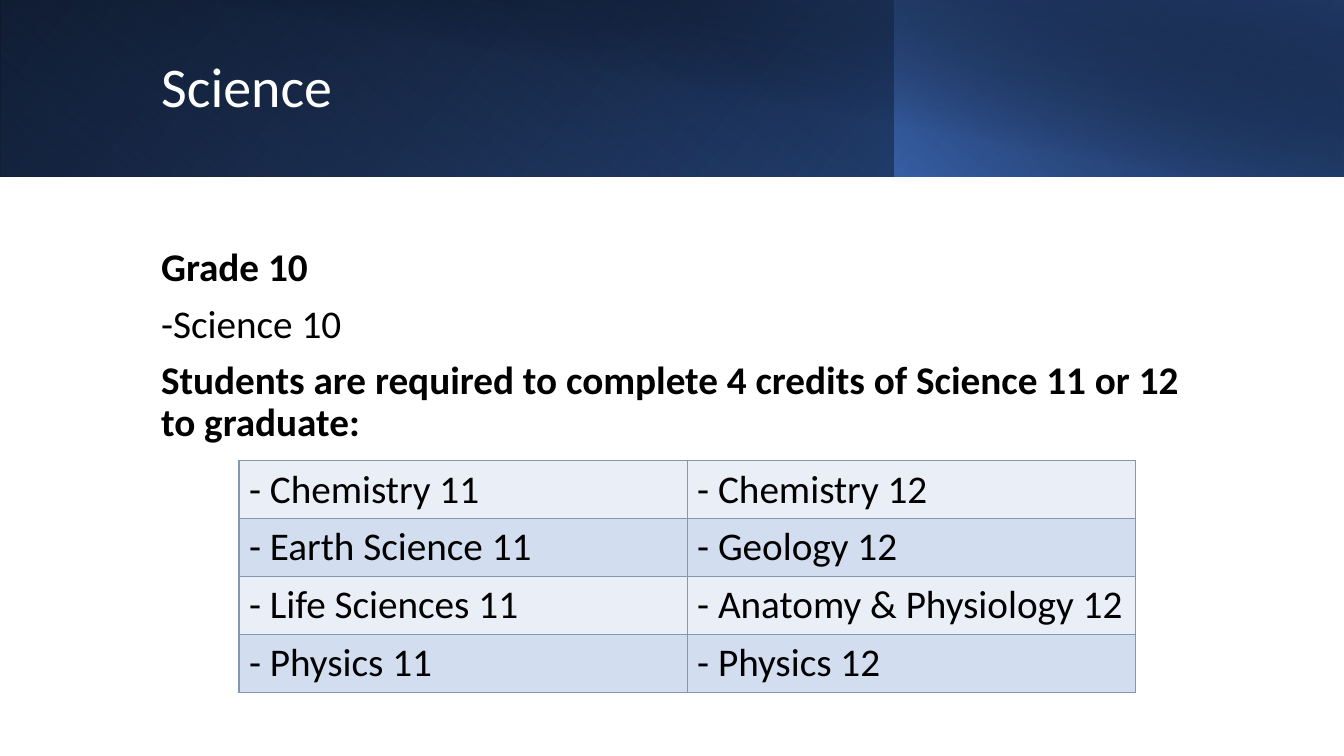
from lxml import etree
from pptx import Presentation
from pptx.dml.color import RGBColor
from pptx.enum.shapes import MSO_SHAPE
from pptx.enum.text import MSO_ANCHOR
from pptx.oxml import parse_xml
from pptx.oxml.ns import nsdecls, qn
from pptx.util import Inches, Pt

RECTANGLE = MSO_SHAPE.RECTANGLE
MIDDLE, TOP = MSO_ANCHOR.MIDDLE, MSO_ANCHOR.TOP
FONT = "Calibri"
COLORS = {
    "white": "FFFFFF", "black": "000000", "blue": "4472C4",
    "deep_blue": "2F5597", "navy": "203864",
    "light_row": "EAEFF7", "dark_row": "D2DEEF", "border": "8497B0",
}
# Each layer: left, width, rotation, flipped, angle, stops (position, color, opacity)
BANNER_LAYERS = [
    (0, 13.33, 0, True, 140, [(0, "black", 100), (100, "deep_blue", 100)]),
    (0, 8.88, 180, True, 230, [(20, "blue", 0), (100, "navy", 55)]),
    (8.87, 4.46, 0, True, 220, [(0, "blue", 66), (100, "black", 30)]),
    (0.5, 12.83, 0, False, 280, [(50, "black", 0), (99, "navy", 52)]),
]
REQUIREMENTS = [
    ("Grade 10", True),
    ("-Science 10", False),
    ("Students are required to complete 4 credits of Science 11 or 12 to graduate:", True),
]
COURSES = [
    ("- Chemistry 11", "- Chemistry 12"),
    ("- Earth Science 11", "- Geology 12"),
    ("- Life Sciences 11", "- Anatomy & Physiology 12"),
    ("- Physics 11", "- Physics 12"),
]


def rgb(name):
    return RGBColor.from_string(COLORS[name])


def add_run(paragraph, text, size, color, bold=False):
    run = paragraph.add_run()
    run.text = text
    run.font.name = FONT
    run.font.size = Pt(size)
    run.font.bold = bold
    run.font.color.rgb = rgb(color)


def add_text_frame(slide, box, anchor):
    frame = slide.shapes.add_textbox(*map(Inches, box)).text_frame
    frame.word_wrap = True
    frame.vertical_anchor = anchor
    return frame


def set_gradient(shape, angle, stops):
    stop_xml = "".join(
        f'<a:gs pos="{position * 1000}"><a:srgbClr val="{COLORS[color]}">'
        f'<a:alpha val="{opacity * 1000}"/></a:srgbClr></a:gs>'
        for position, color, opacity in stops)
    gradient = parse_xml(
        f'<a:gradFill {nsdecls("a")} rotWithShape="1"><a:gsLst>{stop_xml}</a:gsLst>'
        f'<a:lin ang="{angle * 60000}" scaled="0"/></a:gradFill>')
    shape._element.spPr.find(qn("a:prstGeom")).addnext(gradient)


def add_banner(slide, box):
    left, top, width, height = box
    # Layered gradients
    for offset, layer_width, rotation, flipped, angle, stops in BANNER_LAYERS:
        shape = slide.shapes.add_shape(
            RECTANGLE, Inches(left + offset), Inches(top), Inches(layer_width), Inches(height))
        shape.shadow.inherit = False
        shape.line.fill.background()
        shape.rotation = rotation
        if flipped:
            shape._element.spPr.find(qn("a:xfrm")).set("flipH", "1")
        set_gradient(shape, angle, stops)
    # Title
    frame = add_text_frame(slide, (left + 1.5, top + 0.32, width - 2.51, 1.13), MIDDLE)
    paragraph = frame.paragraphs[0]
    paragraph.line_spacing = 0.9
    add_run(paragraph, "Science", 40, "white")


def add_requirements(slide, box):
    frame = add_text_frame(slide, box, TOP)
    for index, (text, bold) in enumerate(REQUIREMENTS):
        paragraph = frame.add_paragraph() if index else frame.paragraphs[0]
        paragraph.line_spacing = 0.9
        paragraph.space_before = Pt(10 if index else 0)
        add_run(paragraph, text, 28, "black", bold)


def set_borders(cell):
    properties = cell._tc.get_or_add_tcPr()
    for index, side in enumerate(("lnL", "lnR", "lnT", "lnB")):
        line = etree.Element(qn(f"a:{side}"), w=str(Pt(1)))
        fill = etree.SubElement(line, qn("a:solidFill"))
        etree.SubElement(fill, qn("a:srgbClr"), val=COLORS["border"])
        properties.insert(index, line)


def add_course_table(slide, box):
    rows, columns = len(COURSES), len(COURSES[0])
    table = slide.shapes.add_table(rows, columns, *map(Inches, box)).table
    table.first_row = False
    for row, courses in enumerate(COURSES):
        for column, course in enumerate(courses):
            cell = table.cell(row, column)
            cell.fill.solid()
            cell.fill.fore_color.rgb = rgb("dark_row" if row % 2 else "light_row")
            add_run(cell.text_frame.paragraphs[0], course, 28, "black")
            set_borders(cell)


def main():
    presentation = Presentation()
    presentation.slide_width = Inches(13.33)
    presentation.slide_height = Inches(7.5)
    slide = presentation.slides.add_slide(presentation.slide_layouts[6])
    add_banner(slide, (0, 0, 13.33, 1.75))
    add_requirements(slide, (1.5, 2.41, 10.63, 2.1))
    add_course_table(slide, (2.37, 4.57, 8.89, 2.3))
    presentation.save("out.pptx")


if __name__ == "__main__":
    main()
